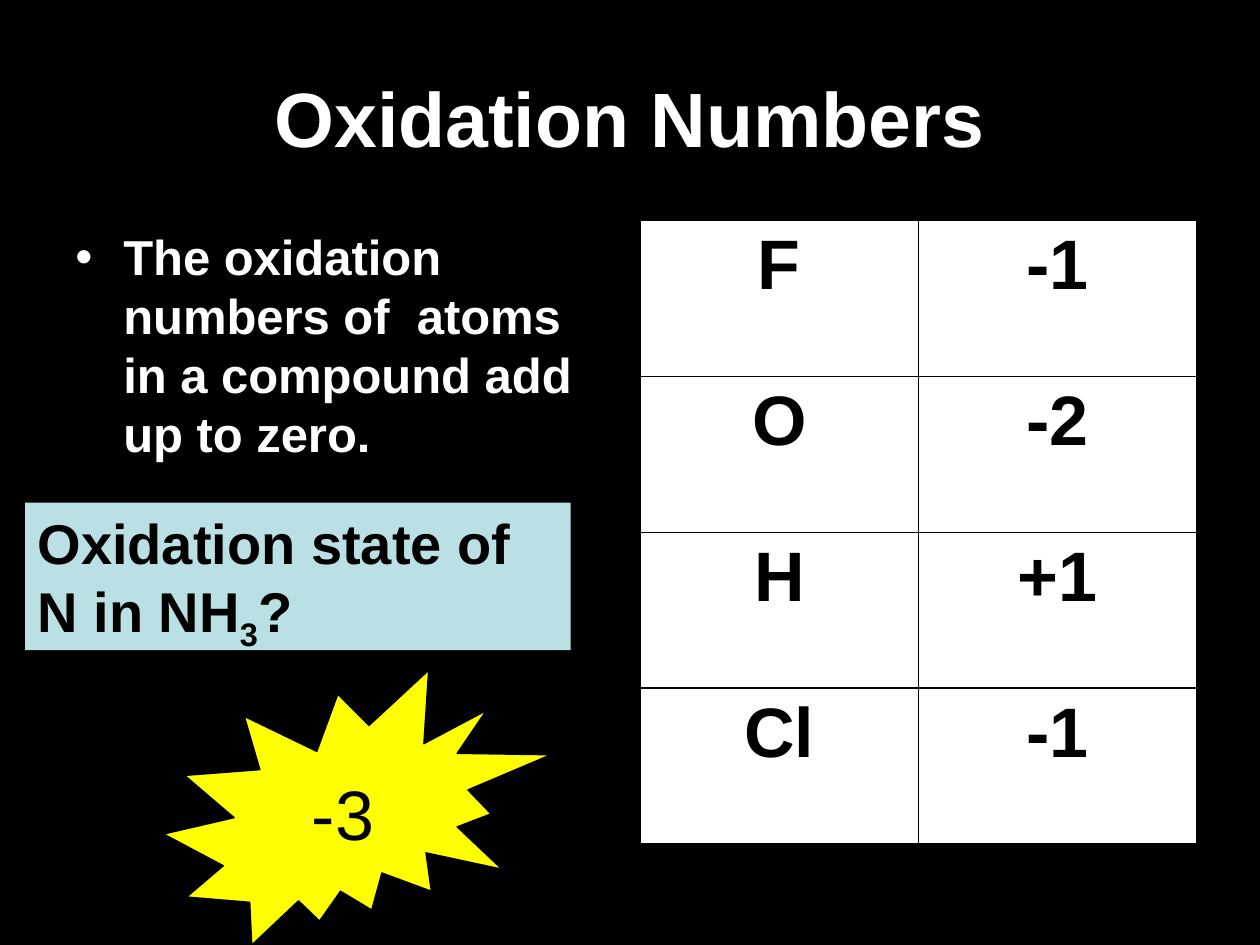
from dataclasses import dataclass

from lxml import etree
from pptx import Presentation
from pptx import util as u
from pptx.dml.color import RGBColor
from pptx.enum import shapes, text
from pptx.oxml import ns


@dataclass(frozen=True)
class Theme:
    font: str = "Arial"
    black: RGBColor = RGBColor(0x00, 0x00, 0x00)
    white: RGBColor = RGBColor(0xFF, 0xFF, 0xFF)
    pale_blue: RGBColor = RGBColor(0xBB, 0xE0, 0xE3)
    yellow: RGBColor = RGBColor(0xFF, 0xFF, 0x00)
    title_size: u.Pt = u.Pt(44)
    body_size: u.Pt = u.Pt(28)
    question_size: u.Pt = u.Pt(32)
    number_size: u.Pt = u.Pt(40)


THEME = Theme()
OXIDATION_NUMBERS = [("F", "-1"), ("O", "-2"), ("H", "+1"), ("Cl", "-1")]


def inches(*lengths):
    return [u.Inches(length) for length in lengths]


def style_font(font, size, color, bold=True):
    font.name = THEME.font
    font.size = size
    font.bold = bold
    font.color.rgb = color


def add_text(page, place, words, size, color, align=text.PP_ALIGN.LEFT,
             anchor=text.MSO_ANCHOR.TOP):
    box = page.shapes.add_textbox(*inches(*place))
    frame = box.text_frame
    frame.word_wrap = True
    frame.vertical_anchor = anchor
    frame.text = words
    para = frame.paragraphs[0]
    para.alignment = align
    style_font(para.runs[0].font, size, color)
    return para


def add_bullet(para, indent):
    properties = para._p.get_or_add_pPr()
    properties.set("marL", str(u.Inches(indent)))
    properties.set("indent", str(-u.Inches(indent)))
    bullet_font = etree.SubElement(properties, ns.qn("a:buFont"))
    bullet_font.set("typeface", THEME.font)
    etree.SubElement(properties, ns.qn("a:buChar")).set("char", "•")


def add_filled_shape(page, kind, place, fill):
    shape = page.shapes.add_shape(kind, *inches(*place))
    shape.shadow.inherit = False
    shape.fill.solid()
    shape.fill.fore_color.rgb = fill
    shape.line.fill.background()
    return shape


def add_question(page, place, parts):
    box = add_filled_shape(page, shapes.MSO_SHAPE.RECTANGLE, place,
                           THEME.pale_blue)
    frame = box.text_frame
    frame.word_wrap = True
    frame.vertical_anchor = text.MSO_ANCHOR.TOP
    para = frame.paragraphs[0]
    para.alignment = text.PP_ALIGN.LEFT
    for words, baseline in parts:
        span = para.add_run()
        span.text = words
        style_font(span.font, THEME.question_size, THEME.black)
        if baseline:
            span.font._element.set("baseline", str(baseline * 1000))


def add_answer(page, place, words):
    burst = add_filled_shape(page, shapes.MSO_SHAPE.EXPLOSION2, place,
                             THEME.yellow)
    burst.line.color.rgb = THEME.black
    burst.line.width = u.Pt(0.75)
    frame = burst.text_frame
    frame.word_wrap = False
    frame.vertical_anchor = text.MSO_ANCHOR.MIDDLE
    frame.text = words
    para = frame.paragraphs[0]
    para.alignment = text.PP_ALIGN.CENTER
    style_font(para.runs[0].font, THEME.number_size, THEME.black, bold=False)


def add_borders(cell):
    properties = cell._tc.get_or_add_tcPr()
    for position, side in enumerate(("lnL", "lnR", "lnT", "lnB")):
        line = etree.Element(ns.qn(f"a:{side}"), w=str(u.Pt(1)))
        fill = etree.SubElement(line, ns.qn("a:solidFill"))
        etree.SubElement(fill, ns.qn("a:srgbClr"), val=str(THEME.black))
        properties.insert(position, line)


def add_number_table(page, place, rows):
    table = page.shapes.add_table(len(rows), len(rows[0]),
                                  *inches(*place)).table
    for row_index, row in enumerate(rows):
        for column_index, words in enumerate(row):
            cell = table.cell(row_index, column_index)
            cell.fill.solid()
            cell.fill.fore_color.rgb = THEME.white
            add_borders(cell)
            cell.text_frame.text = words
            para = cell.text_frame.paragraphs[0]
            para.alignment = text.PP_ALIGN.CENTER
            style_font(para.runs[0].font, THEME.number_size, THEME.black)


def main():
    deck = Presentation()
    deck.slide_width, deck.slide_height = inches(10, 7.5)
    page = deck.slides.add_slide(deck.slide_layouts[6])
    page.background.fill.solid()
    page.background.fill.fore_color.rgb = THEME.black

    # Title and rule
    add_text(page, (0.5, 0.3, 9, 1.25), "Oxidation Numbers",
             THEME.title_size, THEME.white,
             text.PP_ALIGN.CENTER, text.MSO_ANCHOR.MIDDLE)
    rule = add_text(page, (0.5, 1.75, 4.42, 4.95),
                    "The oxidation numbers of  atoms in a compound "
                    "add up to zero.", THEME.body_size, THEME.white)
    add_bullet(rule, 0.38)

    # Known oxidation numbers
    add_number_table(page, (5.08, 1.75, 4.42, 4.95), OXIDATION_NUMBERS)

    # Question and answer
    add_question(page, (0.2, 3.99, 4.33, 1.17),
                 [("Oxidation state of N in NH", 0), ("3", -25), ("?", 0)])
    add_answer(page, (1.3, 5.32, 3.07, 2.18), "-3")

    deck.save("out.pptx")


if __name__ == "__main__":
    main()
